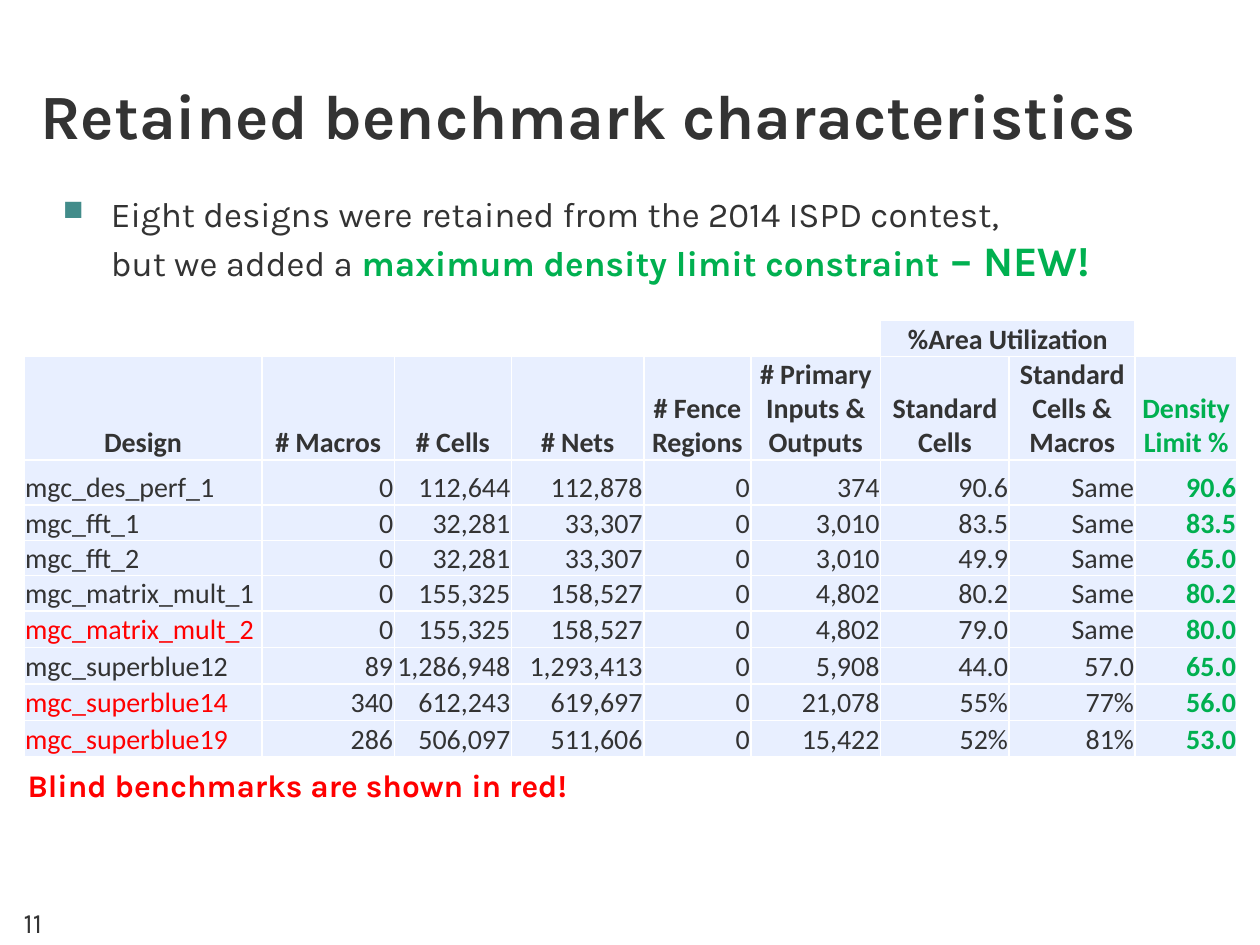
from dataclasses import dataclass

from lxml import etree
from pptx import Presentation
from pptx.dml.color import RGBColor
from pptx.enum.text import MSO_ANCHOR, MSO_AUTO_SIZE, PP_ALIGN
from pptx.oxml.ns import qn
from pptx.util import Inches, Pt

LEFT, CENTER, RIGHT = PP_ALIGN.LEFT, PP_ALIGN.CENTER, PP_ALIGN.RIGHT
BOTTOM = MSO_ANCHOR.BOTTOM
NO_AUTOFIT = MSO_AUTO_SIZE.NONE


@dataclass(frozen=True)
class Theme:
    text: str = "333333"
    green: str = "00B050"
    red: str = "FF0000"
    bullet: str = "428C8A"
    cell: str = "E8EFFF"
    border: str = "FFFFFF"
    body_font: str = "Karla"
    table_font: str = "Calibri"
    title_size: int = 36
    emphasis_size: int = 24
    body_size: int = 20
    note_size: int = 18
    small_size: int = 16


theme = Theme()


def add_run(paragraph, text, size, color=theme.text, bold=False, font=theme.body_font):
    run = paragraph.add_run()
    run.text = text
    run.font.name = font
    run.font.size = Pt(size)
    run.font.bold = bold
    run.font.color.rgb = RGBColor.from_string(color)


def add_text_box(slide, left, top, width, height):
    shape = slide.shapes.add_textbox(Inches(left), Inches(top), Inches(width), Inches(height))
    shape.text_frame.word_wrap = True
    return shape.text_frame


presentation = Presentation()
presentation.slide_width = Inches(10)
presentation.slide_height = Inches(7.5)
slide = presentation.slides.add_slide(presentation.slide_layouts[5])

title = slide.shapes.title
title.left, title.top = Inches(0.32), Inches(0.27)
title.width, title.height = Inches(9.53), Inches(0.94)
frame = title.text_frame
frame.auto_size = NO_AUTOFIT
frame.word_wrap = True
frame.vertical_anchor = BOTTOM
frame.margin_left = frame.margin_right = frame.margin_top = frame.margin_bottom = 0
paragraph = frame.paragraphs[0]
paragraph.alignment = LEFT
add_run(paragraph, "Retained benchmark characteristics", theme.title_size, bold=True)

frame = add_text_box(slide, 0, 1.48, 10, 1.23)
frame.margin_left = frame.margin_right = Inches(0.5)
paragraph = frame.paragraphs[0]
properties = paragraph._p.get_or_add_pPr()
properties.set("marL", str(Inches(0.38)))
properties.set("indent", str(-Inches(0.38)))
bullet_color = etree.SubElement(properties, qn("a:buClr"))
etree.SubElement(bullet_color, qn("a:srgbClr"), val=theme.bullet)
etree.SubElement(properties, qn("a:buSzPct"), val="80000")
etree.SubElement(properties, qn("a:buChar"), char="■")
add_run(paragraph, "Eight designs were retained from the 2014 ISPD contest,", theme.body_size)
paragraph.add_line_break()
add_run(paragraph, "but we added a ", theme.body_size)
add_run(paragraph, "maximum density limit constraint", theme.body_size, theme.green, True)
add_run(paragraph, " – NEW!", theme.emphasis_size, theme.green, True)

headers = ["Design", "# Macros", "# Cells", "# Nets", "# Fence Regions",
           "# Primary Inputs & Outputs", "Standard Cells",
           "Standard Cells & Macros", "Density Limit %"]
designs = [
    ["mgc_des_perf_1", "0", "112,644", "112,878", "0", "374", "90.6", "Same", "90.6"],
    ["mgc_fft_1", "0", "32,281", "33,307", "0", "3,010", "83.5", "Same", "83.5"],
    ["mgc_fft_2", "0", "32,281", "33,307", "0", "3,010", "49.9", "Same", "65.0"],
    ["mgc_matrix_mult_1", "0", "155,325", "158,527", "0", "4,802", "80.2", "Same", "80.2"],
    ["mgc_matrix_mult_2", "0", "155,325", "158,527", "0", "4,802", "79.0", "Same", "80.0"],
    ["mgc_superblue12", "89", "1,286,948", "1,293,413", "0", "5,908", "44.0", "57.0", "65.0"],
    ["mgc_superblue14", "340", "612,243", "619,697", "0", "21,078", "55%", "77%", "56.0"],
    ["mgc_superblue19", "286", "506,097", "511,606", "0", "15,422", "52%", "81%", "53.0"],
]
blind_designs = {"mgc_matrix_mult_2", "mgc_superblue14", "mgc_superblue19"}
group_row = [""] * 6 + ["%Area Utilization", "", ""]
rows = [group_row, headers] + designs
column_widths = [1.89, 1.05, 0.93, 1.05, 0.85, 1.03, 1.02, 1, 0.81]
row_heights = [0.29, 0.82, 0.36] + [0.28] * 3 + [0.29] * 4
density_column = len(headers) - 1

table = slide.shapes.add_table(
    len(rows), len(headers), Inches(0.19), Inches(2.54),
    Inches(sum(column_widths)), Inches(sum(row_heights))).table
table.first_row = False
table.horz_banding = False
for column, width in zip(table.columns, column_widths):
    column.width = Inches(width)
for row, height in zip(table.rows, row_heights):
    row.height = Inches(height)
table.cell(0, 6).merge(table.cell(0, 7))

for row_index, values in enumerate(rows):
    for column_index, value in enumerate(values):
        cell = table.cell(row_index, column_index)
        cell.margin_left = cell.margin_right = cell.margin_top = Inches(0.01)
        cell.margin_bottom = 0
        cell.vertical_anchor = BOTTOM
        for side in ("a:lnL", "a:lnR", "a:lnT", "a:lnB"):
            line = etree.SubElement(cell._tc.get_or_add_tcPr(), qn(side), w=str(Pt(1)))
            line_fill = etree.SubElement(line, qn("a:solidFill"))
            etree.SubElement(line_fill, qn("a:srgbClr"), val=theme.border)
        paragraph = cell.text_frame.paragraphs[0]
        if not value:
            cell.fill.background()
            end_properties = etree.SubElement(paragraph._p, qn("a:endParaRPr"))
            end_properties.set("sz", str(theme.small_size * 100))
            continue
        cell.fill.solid()
        cell.fill.fore_color.rgb = RGBColor.from_string(theme.cell)
        is_header = row_index < 2
        is_density = column_index == density_column
        color = theme.green if is_density else theme.red if value in blind_designs else theme.text
        paragraph.alignment = CENTER if is_header else RIGHT if column_index else LEFT
        add_run(paragraph, value, theme.small_size, color, is_header or is_density, theme.table_font)

frame = add_text_box(slide, 0, 7.25, 0.52, 0.25)
frame.vertical_anchor = BOTTOM
paragraph = frame.paragraphs[0]
paragraph.alignment = CENTER
add_run(paragraph, "11", theme.small_size)

frame = add_text_box(slide, 0.12, 6.03, 5.38, 0.4)
add_run(frame.paragraphs[0], "Blind benchmarks are shown in red!", theme.note_size, theme.red, True)

presentation.save("out.pptx")
